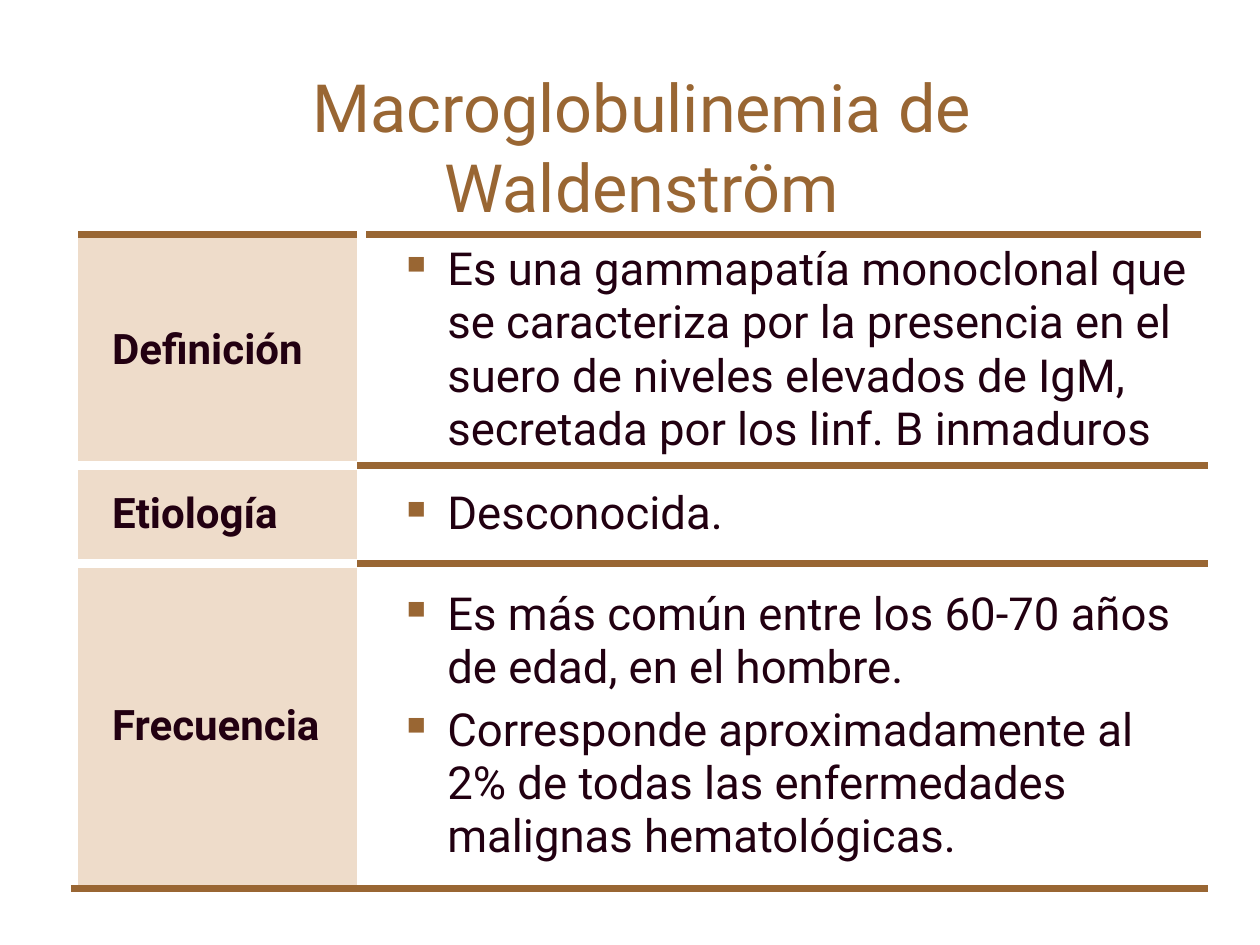
import dataclasses
import lxml.etree
import pptx
import pptx.dml.color
import pptx.enum.text
import pptx.oxml.ns
import pptx.util

Inches = pptx.util.Inches
Pt = pptx.util.Pt
RGB = pptx.dml.color.RGBColor.from_string
qn = pptx.oxml.ns.qn


@dataclasses.dataclass(frozen=True)
class Theme:
    font: str = "Roboto"
    brown: str = "996633"
    sand: str = "EEDCCA"
    white: str = "FFFFFF"
    ink: str = "220011"
    title: float = 38
    label: float = 24
    body: float = 26
    rule: float = 4.5
    gap: float = 6


theme = Theme()


def style(p, size, color, bold=False):
    for r in p.runs:
        r.font.name = theme.font
        r.font.size = Pt(size)
        r.font.bold = bold
        r.font.color.rgb = RGB(color)


def add_border(tcPr, index, side, color, width):
    ln = lxml.etree.Element(qn("a:ln" + side), w=str(Pt(width)))
    fill = lxml.etree.SubElement(ln, qn("a:solidFill"))
    lxml.etree.SubElement(fill, qn("a:srgbClr"), val=color)
    tcPr.insert(index, ln)


rows = [
    ("Definición", 1.83, [
        "Es una gammapatía monoclonal que se caracteriza por la presencia en el "
        "suero de niveles elevados de IgM, secretada por los linf. B inmaduros",
    ]),
    ("Etiología", 0.78, ["Desconocida."]),
    ("Frecuencia", 2.58, [
        "Es más común entre los 60-70 años de edad, en el hombre.",
        "Corresponde aproximadamente al 2% de todas las enfermedades malignas "
        "hematológicas.",
    ]),
]
col_widths = [2.28, 6.69]

prs = pptx.Presentation()
prs.slide_width = Inches(10)
prs.slide_height = Inches(7.5)
s = prs.slides.add_slide(prs.slide_layouts[6])

title = s.shapes.add_textbox(Inches(0.75), Inches(0.76), Inches(8.69), Inches(0.79))
tf = title.text_frame
tf.word_wrap = True
tf.margin_left = tf.margin_right = Inches(0.2)
tf.vertical_anchor = pptx.enum.text.MSO_ANCHOR.MIDDLE
tf.text = "Macroglobulinemia de Waldenström"
p = tf.paragraphs[0]
p.alignment = pptx.enum.text.PP_ALIGN.CENTER
style(p, theme.title, theme.brown)

table = s.shapes.add_table(
    len(rows), 2, Inches(0.59), Inches(1.86),
    Inches(sum(col_widths)), Inches(sum(row[1] for row in rows)),
).table
table.first_row = False
table.horz_banding = False
for column, width in zip(table.columns, col_widths):
    column.width = Inches(width)

for i, (label, height, points) in enumerate(rows):
    table.rows[i].height = Inches(height)
    first, last = i == 0, i == len(rows) - 1
    label_cell, body_cell = table.cell(i, 0), table.cell(i, 1)

    label_cell.text = label
    p = label_cell.text_frame.paragraphs[0]
    p._p.get_or_add_pPr().set("marL", str(Inches(0.2)))
    style(p, theme.label, theme.ink, bold=True)

    tf = body_cell.text_frame
    tf.text = "\n".join(points)
    for j, p in enumerate(tf.paragraphs):
        pPr = p._p.get_or_add_pPr()
        pPr.set("marL", str(Inches(0.58)))
        pPr.set("indent", str(Inches(-0.38)))
        bullet_color = lxml.etree.SubElement(pPr, qn("a:buClr"))
        lxml.etree.SubElement(bullet_color, qn("a:srgbClr"), val=theme.brown)
        lxml.etree.SubElement(pPr, qn("a:buChar"), char="▪")
        if j > 0:
            p.space_before = Pt(0.2 * theme.body)
        style(p, theme.body, theme.ink)

    white_gap = (theme.white, theme.gap)
    white_rule = (theme.white, theme.rule)
    brown_rule = (theme.brown, theme.rule)
    label_borders = {
        "L": white_rule,
        "R": white_gap,
        "T": brown_rule if first else white_gap,
        "B": brown_rule if last else white_gap,
    }
    body_borders = {"L": white_gap, "R": white_rule, "T": brown_rule, "B": brown_rule}
    for cell, fill, borders in (
        (label_cell, theme.sand, label_borders),
        (body_cell, theme.white, body_borders),
    ):
        cell.vertical_anchor = pptx.enum.text.MSO_ANCHOR.MIDDLE
        cell.fill.solid()
        cell.fill.fore_color.rgb = RGB(fill)
        for k, (side, line) in enumerate(borders.items()):
            add_border(cell._tc.get_or_add_tcPr(), k, side, *line)

prs.save("out.pptx")
